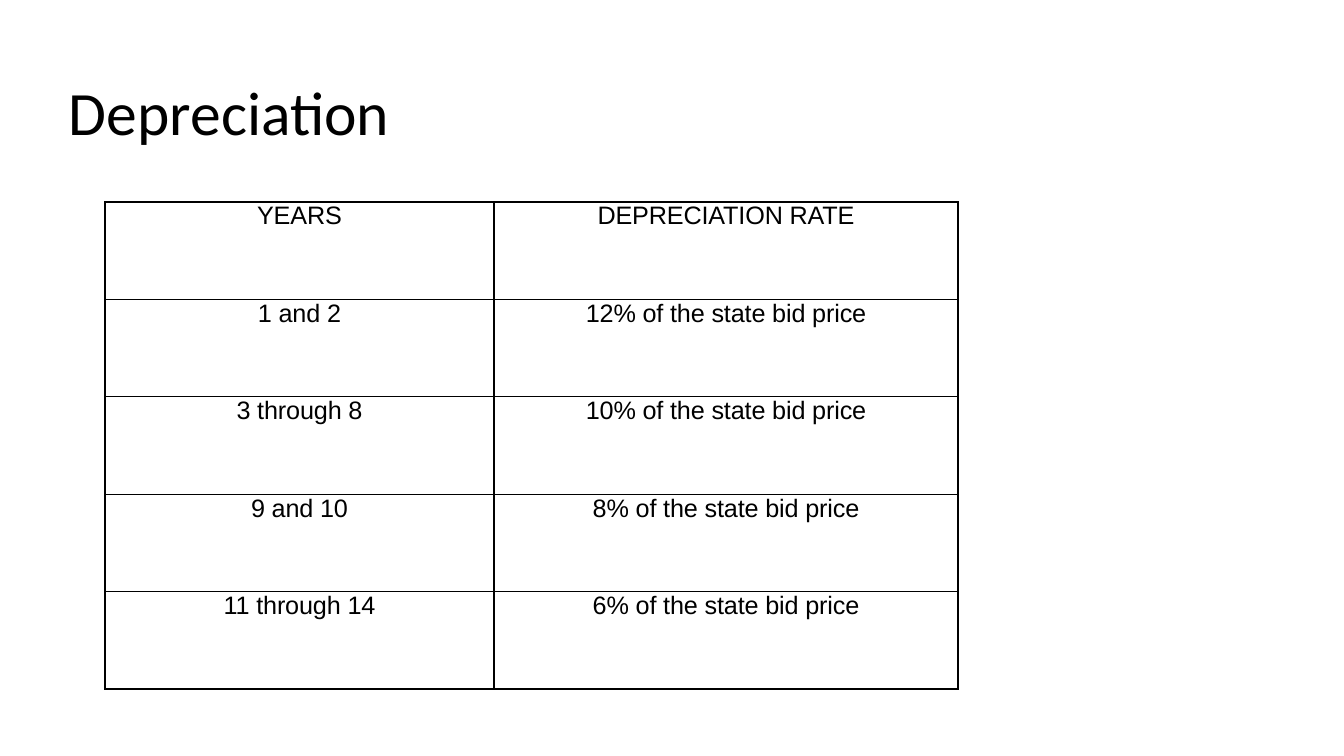
from lxml import etree
from pptx import Presentation, util as u
from pptx.dml.color import RGBColor
from pptx.enum import text
from pptx.oxml import ns

TITLE = "Depreciation"
ROWS = [
    ("YEARS", "DEPRECIATION RATE"),
    ("1 and 2", "12% of the state bid price"),
    ("3 through 8", "10% of the state bid price"),
    ("9 and 10", "8% of the state bid price"),
    ("11 through 14", "6% of the state bid price"),
]
COLORS = {"background": "FFFFFF", "ink": "000000"}
SLIDE = (1344, 756)
TITLE_BOX = (59, 61, 907, 109)
TABLE_LEFT, TABLE_TOP, TABLE_HEIGHT = 105, 202, 487
COLUMN_WIDTHS = (389, 464)
CELL_INSET = 7
EMU_PER_PX = 914400 / 100.8


def px(n):
    return u.Emu(round(n * EMU_PER_PX))


def style_run(r, font, size):
    r.font.name = font
    r.font.size = u.Pt(size)
    r.font.color.rgb = RGBColor.from_string(COLORS["ink"])


def add_borders(cell):
    tc_pr = cell._tc.get_or_add_tcPr()
    for side in ("lnL", "lnR", "lnT", "lnB"):
        line = etree.SubElement(tc_pr, ns.qn(f"a:{side}"), w=str(u.Pt(1)))
        fill = etree.SubElement(line, ns.qn("a:solidFill"))
        etree.SubElement(fill, ns.qn("a:srgbClr"), val=COLORS["ink"])


def add_title(s):
    tf = s.shapes.add_textbox(*map(px, TITLE_BOX)).text_frame
    tf.word_wrap = True
    tf.vertical_anchor = text.MSO_ANCHOR.MIDDLE
    tf.text = TITLE
    p = tf.paragraphs[0]
    p.line_spacing = 0.9
    style_run(p.runs[0], "Calibri", 44)


def fill_cell(cell, words):
    cell.margin_left = cell.margin_right = px(CELL_INSET)
    cell.margin_top = cell.margin_bottom = 0
    add_borders(cell)
    cell.fill.background()
    cell.text_frame.text = words
    p = cell.text_frame.paragraphs[0]
    p.alignment = text.PP_ALIGN.CENTER
    r = p.runs[0]
    style_run(r, "Arial", 18)
    r.font._element.set("spc", "-10")


def add_rates(s):
    box = (TABLE_LEFT, TABLE_TOP, sum(COLUMN_WIDTHS), TABLE_HEIGHT)
    table = s.shapes.add_table(len(ROWS), len(COLUMN_WIDTHS), *map(px, box)).table
    table.first_row = table.horz_banding = False
    for column, width in zip(table.columns, COLUMN_WIDTHS):
        column.width = px(width)
    for row, values in zip(table.rows, ROWS):
        for cell, words in zip(row.cells, values):
            fill_cell(cell, words)


def main():
    prs = Presentation()
    prs.slide_width, prs.slide_height = map(px, SLIDE)
    s = prs.slides.add_slide(prs.slide_layouts[6])
    s.background.fill.solid()
    s.background.fill.fore_color.rgb = RGBColor.from_string(COLORS["background"])
    add_title(s)
    add_rates(s)
    prs.save("out.pptx")


if __name__ == "__main__":
    main()
